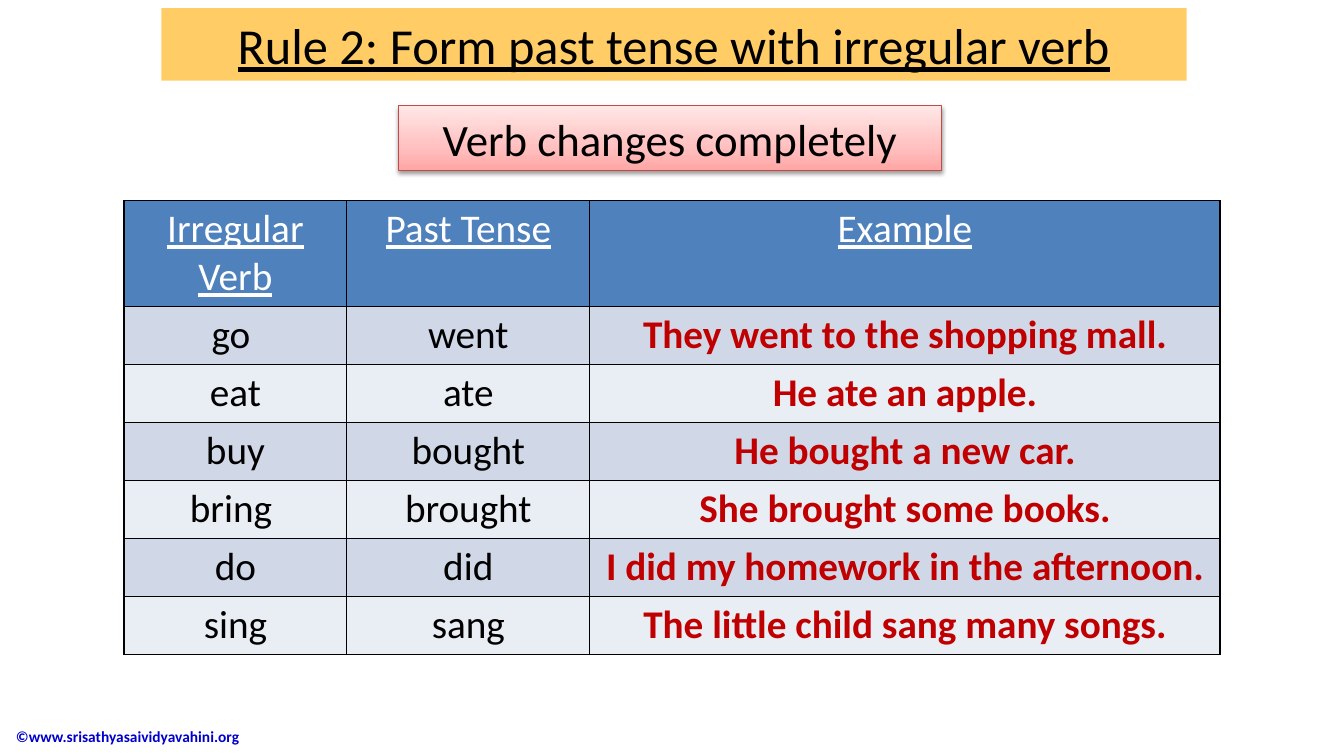
from copy import deepcopy

from lxml import etree
from pptx import Presentation
from pptx.dml.color import RGBColor
from pptx.enum.shapes import MSO_SHAPE
from pptx.enum.text import MSO_ANCHOR, PP_ALIGN
from pptx.oxml.ns import qn
from pptx.util import Inches, Pt

RECT = MSO_SHAPE.RECTANGLE
MIDDLE = MSO_ANCHOR.MIDDLE
LEFT, CENTER = PP_ALIGN.LEFT, PP_ALIGN.CENTER

BLACK = RGBColor(0x00, 0x00, 0x00)
WHITE = RGBColor(0xFF, 0xFF, 0xFF)
BLUE = RGBColor(0x00, 0x00, 0xCC)
RED = RGBColor(0xC0, 0x00, 0x00)
AMBER = RGBColor(0xFF, 0xCC, 0x66)
ROSE_LINE = RGBColor(0xBF, 0x4C, 0x48)
HEADER = RGBColor(0x4F, 0x81, 0xBD)
BANDS = (RGBColor(0xE9, 0xED, 0xF4), RGBColor(0xD0, 0xD8, 0xE8))
ROSE_STOPS = (
    (0, RGBColor(0xFF, 0xA6, 0xA5)),
    (0.35, RGBColor(0xFF, 0xC0, 0xBF)),
    (1, RGBColor(0xFF, 0xE7, 0xE7)),
)

FONT = "Calibri"
TITLE = "Rule 2: Form past tense with irregular verb"
SUBTITLE = "Verb changes completely"
COPYRIGHT = "©www.srisathyasaividyavahini.org"
VERBS = [
    ("Irregular Verb", "Past Tense", "Example"),
    ("go ", "went", "They went to the shopping mall."),
    ("eat", "ate", "He ate an apple."),
    ("buy", "bought", "He bought a new car."),
    ("bring ", "brought", "She brought some books."),
    ("do", "did", "I did my homework in the afternoon."),
    ("sing", "sang", "The little child sang many songs."),
]
COL_WIDTHS = (2.21, 2.41, 6.25)
HEADER_HEIGHT, ROW_HEIGHT = 1.03, 0.57
TABLE_LEFT, TABLE_TOP = 1.23, 1.99


def write(tf, text, size, color, align=CENTER, bold=False, underline=False):
    tf.text = text
    p = tf.paragraphs[0]
    p.alignment = align
    font = p.runs[0].font
    font.name, font.size = FONT, Pt(size)
    font.bold, font.underline = bold, underline
    font.color.rgb = color


def add_box(slide, left, top, width, height):
    sp = slide.shapes.add_shape(
        RECT, Inches(left), Inches(top), Inches(width), Inches(height))
    sp.shadow.inherit = False
    sp.text_frame.word_wrap = True
    sp.text_frame.vertical_anchor = MIDDLE
    return sp


def fill_rose(sp):
    sp.fill.gradient()
    sp.fill.gradient_angle = 90
    stops = sp._element.spPr.find(".//" + qn("a:gsLst"))
    stops.append(deepcopy(stops[-1]))
    for stop, (position, color) in zip(sp.fill.gradient_stops, ROSE_STOPS):
        stop.position = position
        stop.color.rgb = color


def add_shadow(sp):
    effects = sp._element.spPr.find(qn("a:effectLst"))
    shadow = etree.SubElement(
        effects, qn("a:outerShdw"), blurRad=str(Pt(3.1)), dist=str(Pt(1.6)),
        dir="5400000", rotWithShape="0")
    color = etree.SubElement(shadow, qn("a:srgbClr"), val=str(BLACK))
    etree.SubElement(color, qn("a:alpha"), val="38000")


def add_borders(cell):
    tc_pr = cell._tc.get_or_add_tcPr()
    for i, side in enumerate(("a:lnL", "a:lnR", "a:lnT", "a:lnB")):
        ln = etree.Element(qn(side), w=str(Pt(1)))
        fill = etree.SubElement(ln, qn("a:solidFill"))
        etree.SubElement(fill, qn("a:srgbClr"), val=str(BLACK))
        tc_pr.insert(i, ln)


def add_verb_table(slide):
    heights = [HEADER_HEIGHT] + [ROW_HEIGHT] * (len(VERBS) - 1)
    table = slide.shapes.add_table(
        len(VERBS), len(COL_WIDTHS), Inches(TABLE_LEFT), Inches(TABLE_TOP),
        Inches(sum(COL_WIDTHS)), Inches(sum(heights))).table
    for column, width in zip(table.columns, COL_WIDTHS):
        column.width = Inches(width)
    for i, (verb_row, height) in enumerate(zip(VERBS, heights)):
        table.rows[i].height = Inches(height)
        is_header = i == 0
        for j, text in enumerate(verb_row):
            cell = table.cell(i, j)
            is_example = not is_header and j == len(verb_row) - 1
            color = WHITE if is_header else RED if is_example else BLACK
            write(cell.text_frame, text, 28, color,
                  bold=is_example, underline=is_header)
            cell.fill.solid()
            cell.fill.fore_color.rgb = HEADER if is_header else BANDS[i % 2]
            add_borders(cell)


def main():
    prs = Presentation()
    prs.slide_width, prs.slide_height = Inches(13.33), Inches(7.5)
    slide = prs.slides.add_slide(prs.slide_layouts[6])

    footer = add_box(slide, 0.06, 7.1, 3.53, 0.41)
    footer.fill.background()
    footer.line.fill.background()
    write(footer.text_frame, COPYRIGHT, 11, BLUE, align=LEFT, bold=True)

    title = add_box(slide, 1.6, 0.08, 10.17, 0.72)
    title.fill.solid()
    title.fill.fore_color.rgb = AMBER
    title.line.fill.background()
    write(title.text_frame, TITLE, 36, BLACK, underline=True)

    subtitle = add_box(slide, 3.95, 1.05, 5.39, 0.64)
    fill_rose(subtitle)
    subtitle.line.color.rgb = ROSE_LINE
    subtitle.line.width = Pt(0.75)
    add_shadow(subtitle)
    write(subtitle.text_frame, SUBTITLE, 32, BLACK)

    add_verb_table(slide)
    prs.save("out.pptx")


if __name__ == "__main__":
    main()
